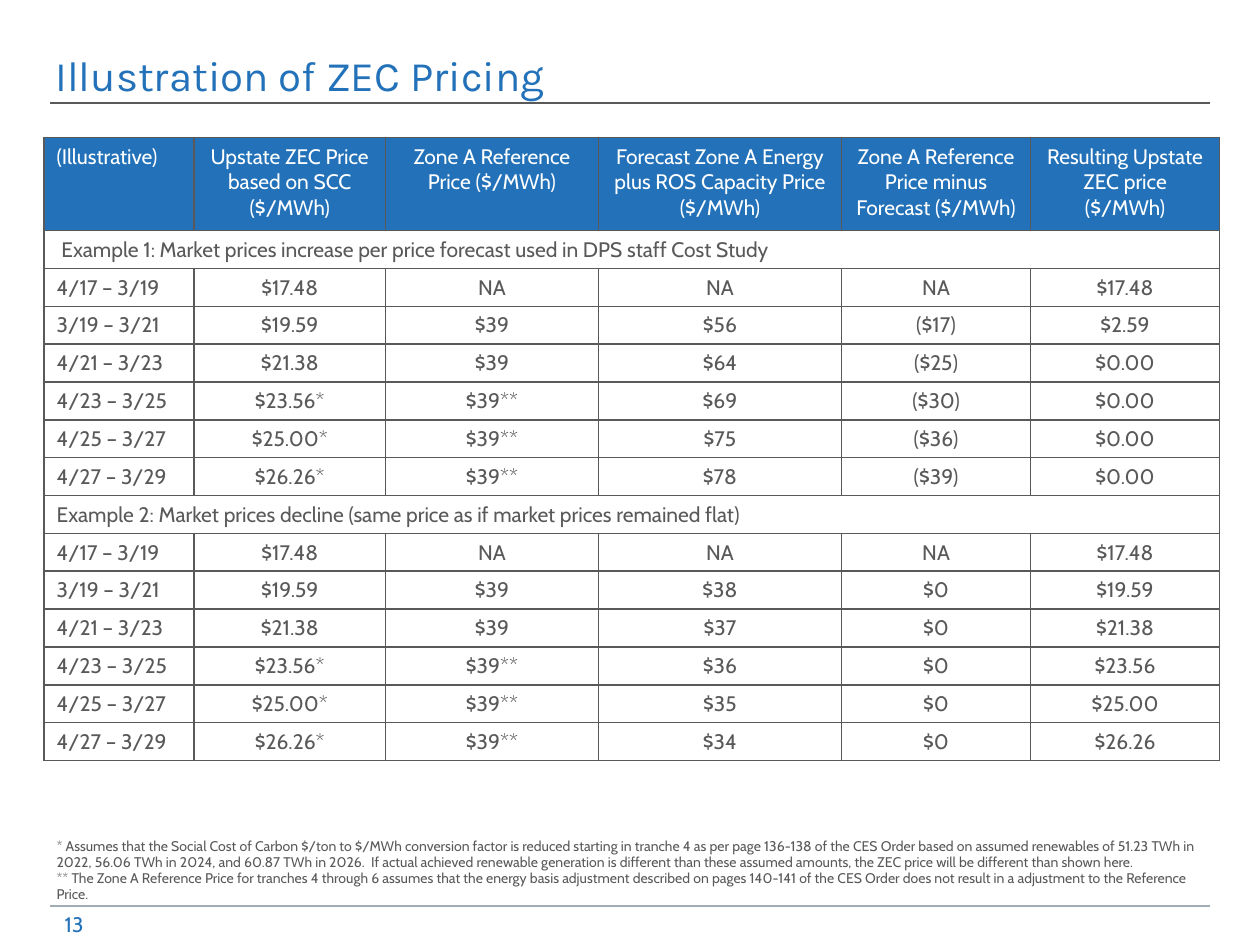
from pptx import Presentation
from pptx.dml.color import RGBColor as Rgb
from pptx.enum.shapes import MSO_CONNECTOR as Connector, MSO_SHAPE as Preset
from pptx.enum.text import MSO_ANCHOR as Anchor, PP_ALIGN as Align
from pptx.oxml.ns import qn
from pptx.util import Inches, Pt
from lxml.etree import SubElement

COLORS = {"blue": "2372B9", "gray": "595959", "rule": "A1ADB5", "white": "FFFFFF"}

HEADERS = [
    "(Illustrative)",
    "Upstate ZEC Price based on SCC ($/MWh)",
    "Zone A Reference Price ($/MWh)",
    "Forecast Zone A Energy plus ROS Capacity Price ($/MWh)",
    "Zone A Reference Price minus Forecast ($/MWh)",
    "Resulting Upstate ZEC price ($/MWh)",
]
# Columns shared by both examples
PERIODS = ["4/17 – 3/19", "3/19 – 3/21", "4/21 – 3/23", "4/23 – 3/25", "4/25 – 3/27", "4/27 – 3/29"]
SCC_PRICES = ["$17.48", "$19.59", "$21.38", "$23.56*", "$25.00*", "$26.26*"]
REFERENCES = ["NA", "$39", "$39", "$39**", "$39**", "$39**"]
# Each example: heading, forecast, difference, resulting price
EXAMPLES = [
    (" Example 1: Market prices increase per price forecast used in DPS staff Cost Study",
     ["NA", "$56", "$64", "$69", "$75", "$78"],
     ["NA", "($17)", "($25)", "($30)", "($36)", "($39)"],
     ["$17.48", "$2.59"] + ["$0.00"] * 4),
    ("Example 2: Market prices decline (same price as if market prices remained flat)",
     ["NA", "$38", "$37", "$36", "$35", "$34"],
     ["NA"] + ["$0"] * 5,
     [price.rstrip("*") for price in SCC_PRICES]),
]
COLUMN_WIDTHS = [1.19, 1.52, 1.69, 1.93, 1.5, 1.5]
HEADER_HEIGHT, ROW_HEIGHT = 0.74, 0.3

# A line break (\v) separates the two notes
FOOTNOTES = (
    "* Assumes that the Social Cost of Carbon $/ton to $/MWh conversion factor is reduced "
    "starting in tranche 4 as per page 136-138 of the CES Order based on assumed renewables "
    "of 51.23 TWh in 2022, 56.06 TWh in 2024, and 60.87 TWh in 2026.  If actual achieved "
    "renewable generation is different than these assumed amounts, the ZEC price will be "
    "different than shown here. \v"
    "** The Zone A Reference Price for tranches 4 through 6 assumes that the energy basis "
    "adjustment described on pages 140-141 of the CES Order does not result in a adjustment "
    "to the Reference Price."
)


class SlideBuilder:
    body_font = "Cabin"
    title_font = "Karla"

    def __init__(self, slide):
        self.slide = slide

    def color(self, name):
        return Rgb.from_string(COLORS[name])

    def fill_text(self, frame, words, color, size, font=None, **paragraph_format):
        paragraph = frame.paragraphs[0]
        paragraph.text = words
        for key, value in paragraph_format.items():
            setattr(paragraph, key, value)
        for run in paragraph.runs:
            for key, value in {"name": font or self.body_font, "size": Pt(size)}.items():
                setattr(run.font, key, value)
            run.font.color.rgb = self.color(color)

    def rule(self, y, color):
        line = self.slide.shapes.add_connector(
            Connector.STRAIGHT, Inches(0.4), Inches(y), Inches(9.6), Inches(y))
        line.line.color.rgb = self.color(color)
        line.line.width = Pt(1)
        SubElement(line._element.spPr, qn("a:effectLst"))

    def text(self, box, words, color, size, font=None, frame_format=None, **paragraph_format):
        frame = self.slide.shapes.add_textbox(*map(Inches, box)).text_frame
        for key, value in {"word_wrap": True, **(frame_format or {})}.items():
            setattr(frame, key, value)
        self.fill_text(frame, words, color, size, font, **paragraph_format)

    def page_number(self, box, number):
        badge = self.slide.shapes.add_shape(Preset.ROUNDED_RECTANGLE, *map(Inches, box))
        badge.shadow.inherit = False
        badge.fill.background()
        badge.line.fill.background()
        badge.text_frame.vertical_anchor = Anchor.MIDDLE
        self.fill_text(badge.text_frame, number, "blue", 12, alignment=Align.LEFT)

    def borders(self, cell):
        properties = cell._tc.get_or_add_tcPr()
        for side in ("lnL", "lnR", "lnT", "lnB"):
            edge = SubElement(properties, qn(f"a:{side}"), w=str(Pt(1)))
            fill = SubElement(edge, qn("a:solidFill"))
            SubElement(fill, qn("a:srgbClr"), val=COLORS["gray"])

    def table(self, left, top, widths, heights, rows):
        box = map(Inches, (left, top, sum(widths), sum(heights)))
        table = self.slide.shapes.add_table(len(rows), len(widths), *box).table
        table.horz_banding = False
        for column, width in zip(table.columns, widths):
            column.width = Inches(width)
        for r, (row, height) in enumerate(zip(rows, heights)):
            table.rows[r].height = Inches(height)
            for c in range(len(widths)):
                cell = table.cell(r, c)
                self.borders(cell)
                if r == 0:
                    cell.fill.solid()
                    cell.fill.fore_color.rgb = self.color("blue")
                else:
                    cell.fill.background()
                if c < len(row):
                    self.fill_text(cell.text_frame, row[c], "gray" if r else "white", 12,
                                   alignment=Align.CENTER if c else Align.LEFT)
            # A lone entry is a heading across the whole row
            if len(row) == 1:
                table.cell(r, 0).merge(table.cell(r, len(widths) - 1))


def main():
    deck = Presentation()
    deck.slide_width, deck.slide_height = Inches(10), Inches(7.5)
    builder = SlideBuilder(deck.slides.add_slide(deck.slide_layouts[6]))

    # Frame of the page
    builder.rule(7.19, "rule")
    builder.rule(0.82, "gray")
    builder.page_number((0.4, 7.17, 0.46, 0.33), "13")

    # Title
    margins = dict.fromkeys(("margin_left", "margin_top", "margin_right", "margin_bottom"), 0)
    builder.text((0.44, 0, 9.2, 0.8), "Illustration of ZEC Pricing", "blue", 24,
                 SlideBuilder.title_font, {"vertical_anchor": Anchor.BOTTOM, **margins},
                 line_spacing=0.9)

    # Price table
    rows = [HEADERS]
    for heading, *results in EXAMPLES:
        rows.append([heading])
        rows.extend(zip(PERIODS, SCC_PRICES, REFERENCES, *results))
    heights = [HEADER_HEIGHT] + [ROW_HEIGHT] * (len(rows) - 1)
    builder.table(0.35, 1.09, COLUMN_WIDTHS, heights, rows)

    # Footnotes
    builder.text((0.35, 6.61, 9.38, 0.61), FOOTNOTES, "gray", 8, line_spacing=0.95)

    deck.save("out.pptx")


if __name__ == "__main__":
    main()
